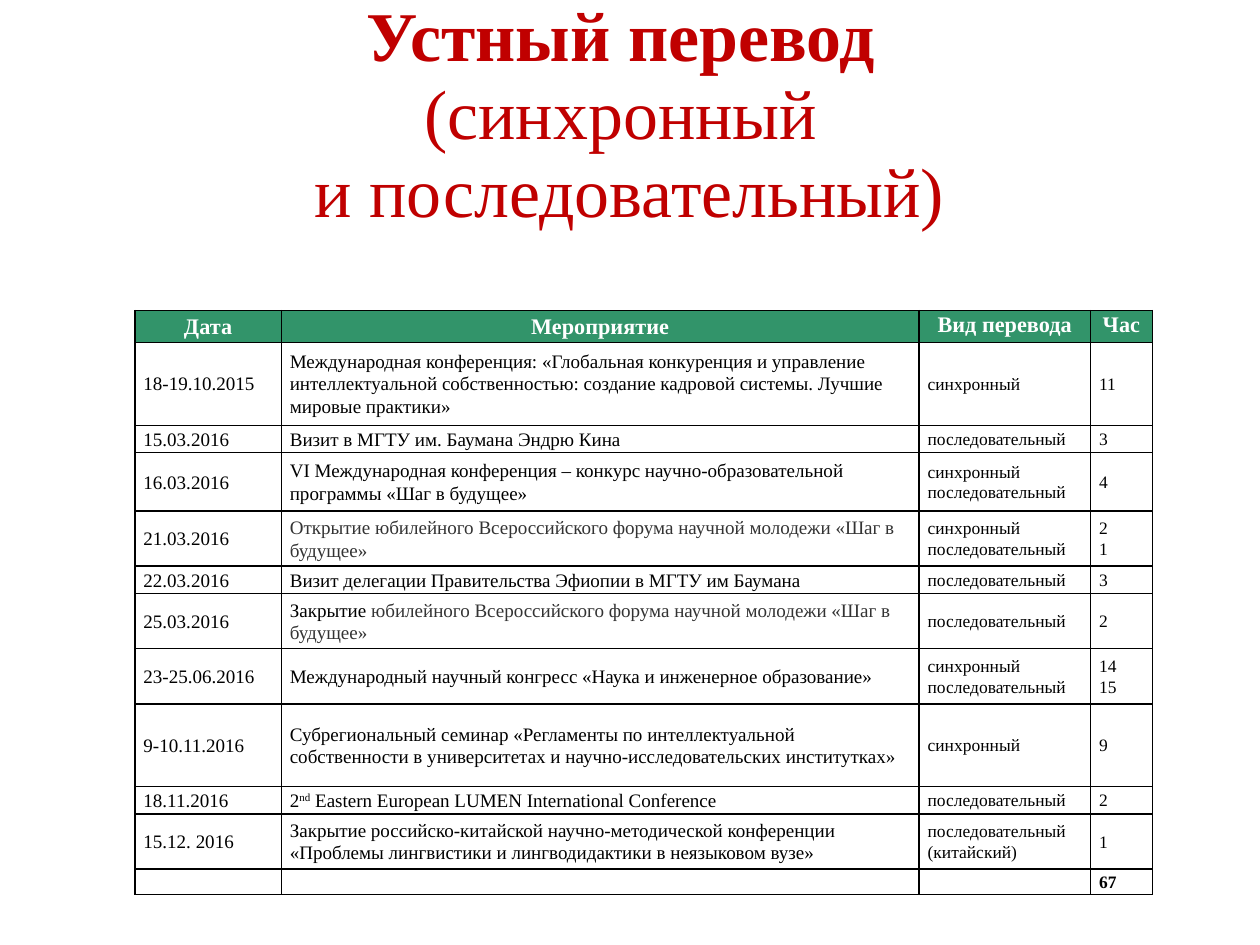
"""Build a slide listing interpreting events in a table."""
from dataclasses import dataclass

from lxml import etree
from pptx import Presentation
from pptx import util as u
from pptx.dml import color
from pptx.enum import text
from pptx.oxml import ns

FONT = "Times New Roman"
RED, GREEN, BLACK, GREY, WHITE = "C00000", "32946A", "000000", "333333", "FFFFFF"
COLUMN_WIDTHS = (92.2, 401.8, 108, 38.9)
HEADINGS = ("Дата", "Мероприятие", "Вид перевода", "Час")
HEADER_HEIGHT, LINE_HEIGHT, TOTAL_HEIGHT = 20.2, 17.35, 15.8
SIMULTANEOUS, CONSECUTIVE = "синхронный", "последовательный"


@dataclass(frozen=True)
class Span:
    words: str
    ink: str = BLACK
    raised: bool = False


@dataclass(frozen=True)
class Style:
    size: float
    ink: str = BLACK
    bold: bool = False
    align: text.PP_ALIGN = text.PP_ALIGN.LEFT
    anchor: text.MSO_ANCHOR = text.MSO_ANCHOR.MIDDLE


@dataclass(frozen=True)
class Event:
    date: str
    name: tuple[Span, ...]
    modes: tuple[str, ...]
    hours: tuple[str, ...]
    lines: float


EVENTS = (
    Event("18-19.10.2015", (Span(
        "Международная конференция: «Глобальная конкуренция и управление "
        "интеллектуальной собственностью: создание кадровой системы. "
        "Лучшие мировые практики»"),), (SIMULTANEOUS,), ("11",), 3),
    Event("15.03.2016", (Span("Визит в МГТУ им. Баумана Эндрю Кина"),),
          (CONSECUTIVE,), ("3",), 1),
    Event("16.03.2016", (Span(
        "VI Международная конференция – конкурс научно-образовательной "
        "программы «Шаг в будущее»"),),
        (f"{SIMULTANEOUS} {CONSECUTIVE}",), ("4",), 2.12),
    Event("21.03.2016", (Span(
        "Открытие юбилейного Всероссийского форума научной молодежи "
        "«Шаг в будущее»", GREY),), (SIMULTANEOUS, CONSECUTIVE), ("2", "1"), 2),
    Event("22.03.2016", (Span(
        "Визит делегации Правительства Эфиопии в МГТУ им Баумана"),),
        (CONSECUTIVE,), ("3",), 1),
    Event("25.03.2016", (Span("Закрытие "), Span(
        "юбилейного Всероссийского форума научной молодежи "
        "«Шаг в будущее»", GREY)), (CONSECUTIVE,), ("2",), 2),
    Event("23-25.06.2016", (Span(
        "Международный научный конгресс «Наука и инженерное образование»"),),
        (SIMULTANEOUS, CONSECUTIVE), ("14", "15"), 2),
    Event("9-10.11.2016", (Span(
        "Субрегиональный семинар «Регламенты по интеллектуальной собственности "
        "в университетах и научно-исследовательских институтках»"),),
        (SIMULTANEOUS,), ("9",), 3),
    Event("18.11.2016", (
        Span("2"), Span("nd", raised=True),
        Span(" Eastern European LUMEN International Conference")),
        (CONSECUTIVE,), ("2",), 1),
    Event("15.12. 2016", (Span(
        "Закрытие российско-китайской научно-методической конференции "
        "«Проблемы лингвистики и лингводидактики в неязыковом вузе»"),),
        (f"{CONSECUTIVE} (китайский)",), ("1",), 2),
)


def paint(target, ink: str) -> None:
    """Give a font or solid fill its colour."""
    target.rgb = color.RGBColor.from_string(ink)


def style_paragraph(para, style: Style, spacing: float) -> None:
    """Set alignment, line spacing and font of a paragraph."""
    para.alignment = style.align
    para.line_spacing = spacing
    para.font.name = FONT
    para.font.size = u.Pt(style.size)
    para.font.bold = style.bold
    paint(para.font.color, style.ink)


def add_title(page) -> None:
    """Add the three-line heading."""
    box = page.shapes.add_textbox(u.Pt(39.6), u.Pt(23.4), u.Pt(714.2), u.Pt(99.4))
    frame = box.text_frame
    frame.word_wrap = True
    frame.vertical_anchor = text.MSO_ANCHOR.MIDDLE
    frame.margin_left = frame.margin_right = frame.margin_top = frame.margin_bottom = 0
    para = frame.paragraphs[0]
    style_paragraph(para, Style(44, RED, align=text.PP_ALIGN.CENTER), 0.93)
    lead = para.add_run()
    lead.text = "Устный перевод "
    lead.font.bold = True
    for line in ("(синхронный ", "и последовательный)"):
        para.add_line_break()
        para.add_run().text = line
    for line_break in para._p.findall(ns.qn("a:br")):
        etree.SubElement(line_break, ns.qn("a:rPr"), sz="4400")


def outline_cell(cell) -> None:
    """Draw a one-point black border on each side of a cell."""
    properties = cell._tc.get_or_add_tcPr()
    for side in ("lnL", "lnR", "lnT", "lnB"):
        border = etree.SubElement(properties, ns.qn(f"a:{side}"), w=str(u.Pt(1)))
        fill = etree.SubElement(border, ns.qn("a:solidFill"))
        etree.SubElement(fill, ns.qn("a:srgbClr"), val=BLACK)


def fill_cell(cell, paragraphs: tuple[tuple[Span, ...], ...], style: Style,
              background: str | None = None) -> None:
    """Format a cell and write its paragraphs."""
    outline_cell(cell)
    if background:
        cell.fill.solid()
        paint(cell.fill.fore_color, background)
    else:
        cell.fill.background()
    cell.margin_left = cell.margin_right = u.Pt(5.4)
    cell.margin_top = cell.margin_bottom = 0
    cell.vertical_anchor = style.anchor
    frame = cell.text_frame
    for index, spans in enumerate(paragraphs):
        para = frame.add_paragraph() if index else frame.paragraphs[0]
        style_paragraph(para, style, 1.07)
        for span in spans:
            run = para.add_run()
            run.text = span.words
            if span.ink != BLACK:
                paint(run.font.color, span.ink)
            if span.raised:
                run.font._element.set("baseline", "30000")
        if not spans:
            etree.SubElement(para._p, ns.qn("a:endParaRPr"),
                             sz=str(int(style.size * 100)))


def plain(*lines: str) -> tuple[tuple[Span, ...], ...]:
    """Turn lines into paragraphs of one span each."""
    return tuple((Span(line),) for line in lines)


def add_events(page) -> None:
    """Add the table of events with its header and total."""
    heights = (HEADER_HEIGHT, *(LINE_HEIGHT * event.lines for event in EVENTS),
               TOTAL_HEIGHT)
    table = page.shapes.add_table(
        len(heights), len(COLUMN_WIDTHS), u.Pt(85), u.Pt(195.6),
        u.Pt(sum(COLUMN_WIDTHS)), u.Pt(sum(heights))).table
    table.horz_banding = False
    for column, width in zip(table.columns, COLUMN_WIDTHS):
        column.width = u.Pt(width)
    for row, height in zip(table.rows, heights):
        row.height = u.Pt(height)

    for index, heading in enumerate(HEADINGS):
        anchor = text.MSO_ANCHOR.MIDDLE if index < 2 else text.MSO_ANCHOR.TOP
        style = Style(14, WHITE, True, text.PP_ALIGN.CENTER, anchor)
        fill_cell(table.cell(0, index), plain(heading), style, GREEN)
    for number, event in enumerate(EVENTS, 1):
        contents = (plain(event.date), (event.name,),
                    plain(*event.modes), plain(*event.hours))
        for index, content in enumerate(contents):
            style = Style(12 if index < 2 else 11)
            fill_cell(table.cell(number, index), content, style)
    total = len(heights) - 1
    for index, content in enumerate((((),), ((),), ((),), plain("67"))):
        fill_cell(table.cell(total, index), content, Style(11, bold=True))


def main() -> None:
    """Create and save the deck."""
    deck = Presentation()
    deck.slide_width, deck.slide_height = u.Pt(793.75), u.Pt(595.25)
    page = deck.slides.add_slide(deck.slide_layouts[6])
    add_title(page)
    add_events(page)
    deck.save("out.pptx")


if __name__ == "__main__":
    main()
